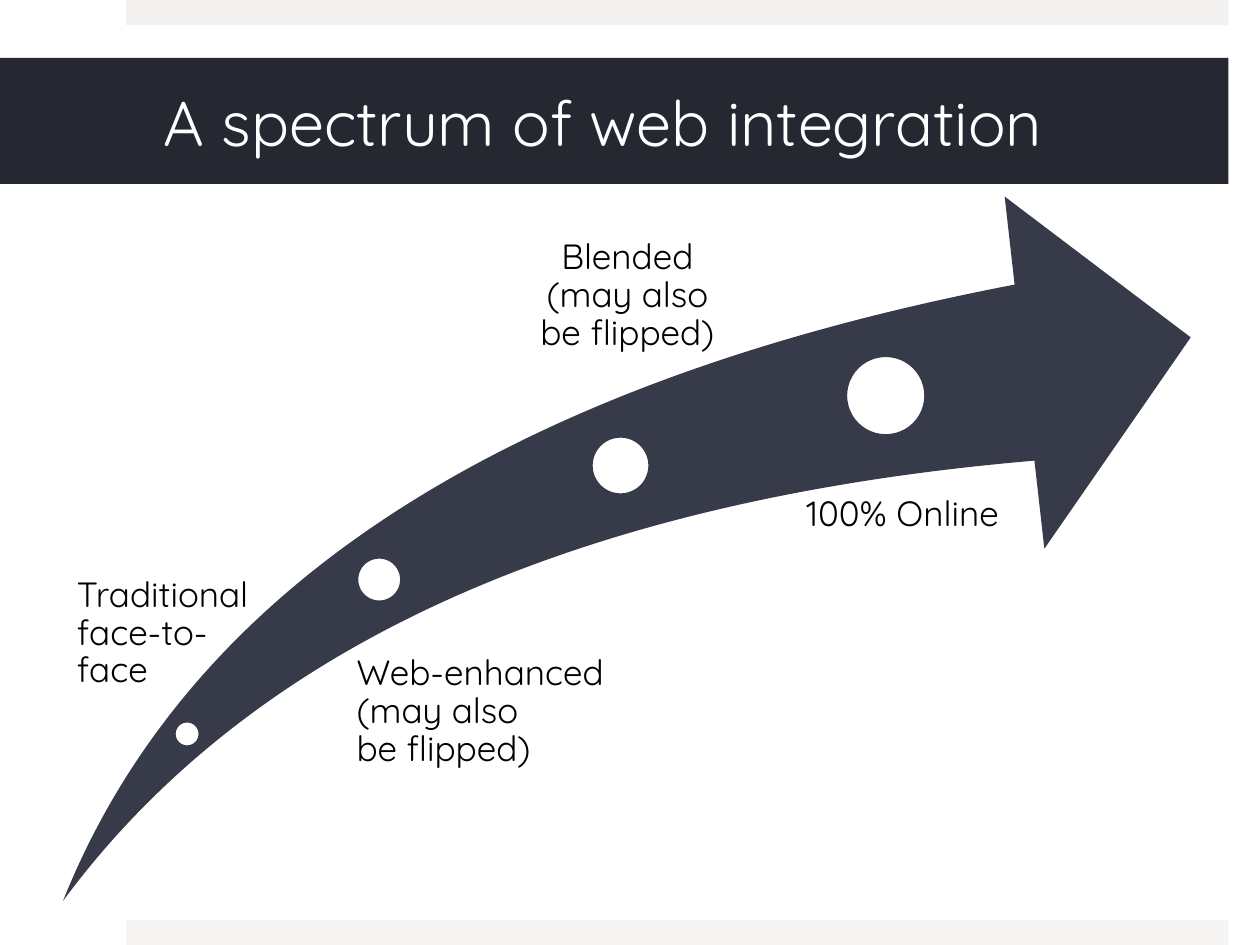
"""Build a slide showing a spectrum of web integration along a rising arrow."""
from pptx import Presentation
from pptx.dml.color import RGBColor
from pptx.enum.shapes import MSO_SHAPE as Shape
from pptx.enum.text import MSO_ANCHOR as Anchor, MSO_AUTO_SIZE as AutoSize, PP_ALIGN as Align
from pptx.util import Inches, Pt

FONT = "Quicksand"
BLACK = RGBColor(0x00, 0x00, 0x00)
WHITE = RGBColor(0xFF, 0xFF, 0xFF)
BANNER = RGBColor(0x25, 0x27, 0x31)
SLATE = RGBColor(0x37, 0x3A, 0x49)
TOP_STRIP = RGBColor(0xF2, 0xF1, 0xEF)
BOTTOM_STRIP = RGBColor(0xF7, 0xF5, 0xF4)

# Each stage: dot (left, top, diameter), label, label box, left inset, alignment.
STAGES = [
    ((1.38, 5.72, 0.21), "Traditional face-to-face",
     (0.5, 4.58, 1.53, 1.33), 0.11, Align.LEFT),
    ((2.83, 4.42, 0.36), "Web-enhanced\v(may also\vbe flipped)",
     (2.64, 5.2, 4.54, 1.77), 0.19, Align.LEFT),
    ((4.69, 3.46, 0.47), "Blended\v(may also\vbe flipped)",
     (2.99, 1.9, 3.73, 3.46), 0.25, Align.CENTER),
    ((6.71, 2.82, 0.64), "100% Online",
     (5.85, 3.94, 2.4, 2.89), 0.55, Align.LEFT),
]


def style_text(paragraph, size, color, align):
    """Set the font and alignment of a paragraph."""
    paragraph.alignment = align
    paragraph.font.name = FONT
    paragraph.font.size = Pt(size)
    paragraph.font.color.rgb = color


def set_margins(frame, left, top, right, bottom):
    """Set the inner margins of a text frame in inches."""
    frame.margin_left, frame.margin_top = Inches(left), Inches(top)
    frame.margin_right, frame.margin_bottom = Inches(right), Inches(bottom)


def add_filled(slide, kind, box, fill, outline=None):
    """Add a flat preset shape, outlined only when a colour is given."""
    shape = slide.shapes.add_shape(kind, *map(Inches, box))
    shape.shadow.inherit = False
    shape.fill.solid()
    shape.fill.fore_color.rgb = fill
    if outline is None:
        shape.line.fill.background()
    else:
        shape.line.color.rgb = outline
        shape.line.width = Pt(2)
    return shape


def set_title(slide, text):
    """Turn the title placeholder into the dark banner."""
    title = slide.shapes.title
    title.left, title.top, title.width, title.height = map(Inches, (0, 0.46, 9.75, 1))
    title.fill.solid()
    title.fill.fore_color.rgb = BANNER
    frame = title.text_frame
    frame.text = text
    frame.auto_size = AutoSize.NONE
    frame.vertical_anchor = Anchor.MIDDLE
    set_margins(frame, 1.3, 0.05, 0.3, 0.05)
    style_text(frame.paragraphs[0], 36, WHITE, Align.LEFT)


def add_label(slide, text, box, inset, align):
    """Add the wrapped label of a stage."""
    frame = slide.shapes.add_textbox(*map(Inches, box)).text_frame
    frame.word_wrap = True
    set_margins(frame, inset, 0, 0, 0)
    frame.text = text
    label = frame.paragraphs[0]
    label.line_spacing = 0.9
    style_text(label, 20, BLACK, align)


def main():
    """Assemble and save the slide."""
    deck = Presentation()
    deck.slide_width, deck.slide_height = Inches(10), Inches(7.5)
    slide = deck.slides.add_slide(deck.slide_layouts[5])
    set_title(slide, "A spectrum of web integration")
    for top, fill in ((0, TOP_STRIP), (7.3, BOTTOM_STRIP)):
        add_filled(slide, Shape.RECTANGLE, (1, top, 8.75, 0.2), fill)
    arrow = add_filled(slide, Shape.SWOOSH_ARROW, (0.5, 1.56, 8.95, 5.59), SLATE)
    arrow.adjustments[0] = arrow.adjustments[1] = 0.25
    for (left, top, size), text, box, inset, align in STAGES:
        add_filled(slide, Shape.OVAL, (left, top, size, size), WHITE, SLATE)
        add_label(slide, text, box, inset, align)
    deck.save("out.pptx")


if __name__ == "__main__":
    main()
